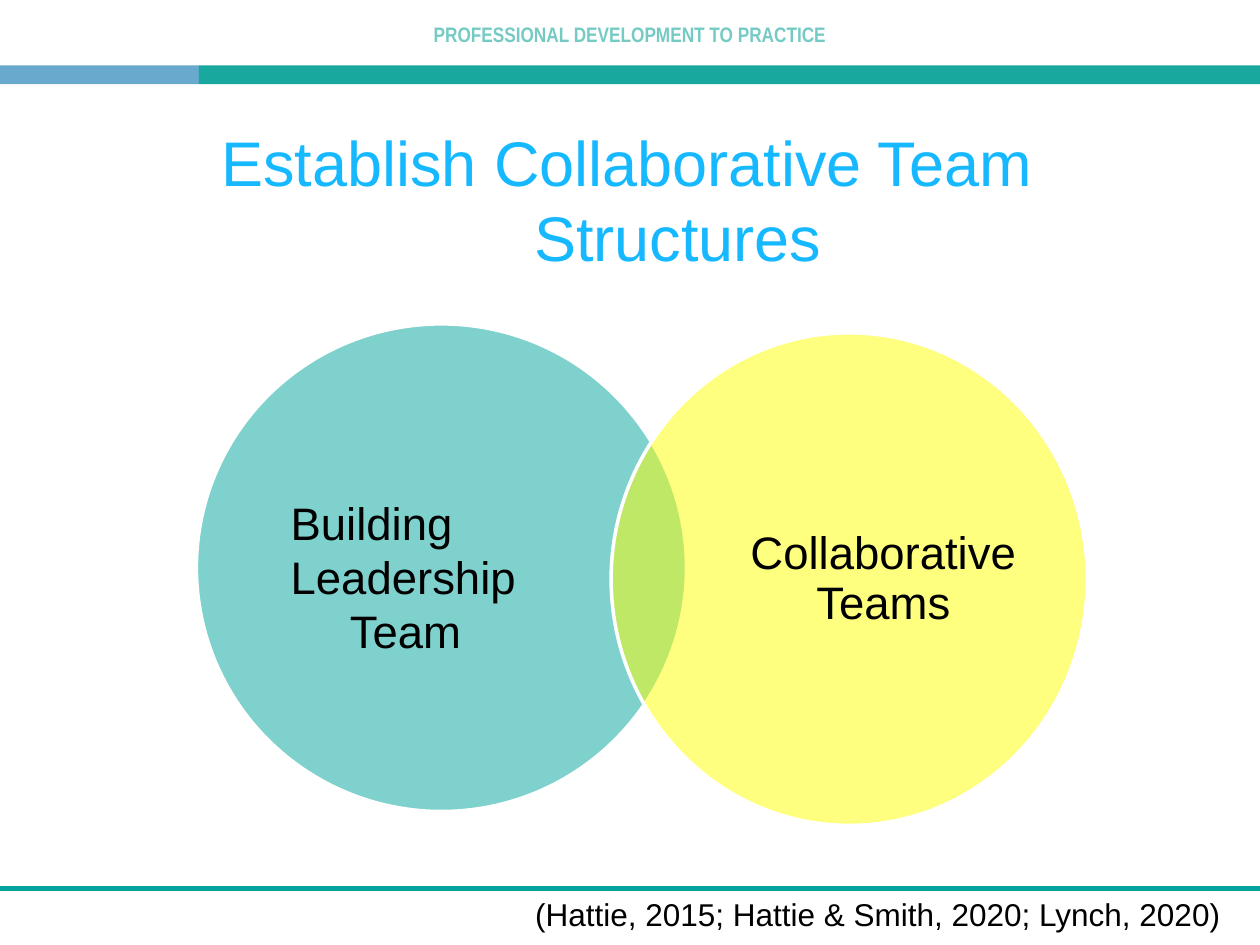
from dataclasses import dataclass

from pptx import Presentation
from pptx.dml.color import RGBColor
from pptx.enum.shapes import MSO_CONNECTOR, MSO_SHAPE
from pptx.enum.text import MSO_ANCHOR, PP_ALIGN
from pptx.oxml.xmlchemy import OxmlElement
from pptx.slide import Slide
from pptx.util import Cm, Pt


@dataclass(frozen=True)
class Theme:
    teal: str = "19A89E"
    deep: str = "00A49D"
    blue: str = "69A9CD"
    sky: str = "16B8FF"
    yellow: str = "FFFF00"
    white: str = "FFFFFF"
    black: str = "000000"
    font: str = "Arial"
    narrow: str = "Arial Narrow"
    small: int = 12
    cite: int = 18
    label: int = 26
    title: int = 36


THEME = Theme()


@dataclass(frozen=True)
class Box:
    left: float
    top: float
    width: float
    height: float

    def place(self) -> tuple:
        return Cm(self.left), Cm(self.top), Cm(self.width), Cm(self.height)


@dataclass(frozen=True)
class Para:
    text: str
    size: int
    color: str = THEME.black
    font: str = THEME.font
    bold: bool = False
    align: PP_ALIGN = PP_ALIGN.CENTER
    pitch: float = 0  # line pitch in points, 0 for single spacing
    margin: float = 0
    indent: float = 0
    alpha: int = 100


@dataclass(frozen=True)
class Circle:
    box: Box
    fill: str
    area: Box
    drop: float  # top inset of the label
    paras: tuple[Para, ...]


def fade(fill, alpha: int) -> None:
    """Make a solid fill see-through, alpha in percent."""
    node = OxmlElement("a:alpha")
    node.set("val", str(alpha * 1000))
    fill._xPr.solidFill[0].append(node)


def add_text(slide: Slide, box: Box, paras: tuple[Para, ...],
             pad: tuple = (0.25, 0.13, 0.25, 0.13),
             anchor: MSO_ANCHOR = MSO_ANCHOR.TOP) -> None:
    frame = slide.shapes.add_textbox(*box.place()).text_frame
    frame.word_wrap = True
    frame.vertical_anchor = anchor
    (frame.margin_left, frame.margin_top,
     frame.margin_right, frame.margin_bottom) = map(Cm, pad)
    for i, para in enumerate(paras):
        p = frame.add_paragraph() if i else frame.paragraphs[0]
        p.alignment = para.align
        if para.pitch:
            p.line_spacing = Pt(para.pitch)
        props = p._p.get_or_add_pPr()
        props.set("marL", str(Cm(para.margin)))
        props.set("indent", str(Cm(para.indent)))
        run = p.add_run()
        run.text = para.text
        font = run.font
        font.name, font.size, font.bold = para.font, Pt(para.size), para.bold
        font.color.rgb = RGBColor.from_string(para.color)
        if para.alpha < 100:
            fade(font.fill, para.alpha)


def add_shape(slide: Slide, kind: MSO_SHAPE, box: Box, fill: str,
              alpha: int = 100, edge: str = "") -> None:
    shape = slide.shapes.add_shape(kind, *box.place())
    shape.shadow.inherit = False
    shape.fill.solid()
    shape.fill.fore_color.rgb = RGBColor.from_string(fill)
    if alpha < 100:
        fade(shape.fill, alpha)
    if edge:
        shape.line.color.rgb = RGBColor.from_string(edge)
        shape.line.width = Pt(2)
    else:
        shape.line.fill.background()


def add_rule(slide: Slide, top: float, width: float) -> None:
    line = slide.shapes.add_connector(
        MSO_CONNECTOR.STRAIGHT, Cm(0), Cm(top), Cm(width), Cm(top))
    line.line.color.rgb = RGBColor.from_string(THEME.deep)
    line.line.width = Pt(3)
    line._element.spPr.append(OxmlElement("a:effectLst"))


def add_circle(slide: Slide, item: Circle) -> None:
    add_shape(slide, MSO_SHAPE.OVAL, item.box, item.fill, 50, THEME.white)
    add_text(slide, item.area, item.paras, (0, item.drop, 0, 0),
             MSO_ANCHOR.MIDDLE)


WIDTH, HEIGHT = 25.4, 19.05
SPLIT = 4.01  # where the two header bars meet
BASE = 17.91  # footer rule

CIRCLES = (
    Circle(Box(3.96, 6.53, 9.88, 9.83), THEME.deep,
           Box(5.33, 7.67, 5.69, 7.52), 0.38,
           (Para("Building Leadership", THEME.label, align=PP_ALIGN.LEFT,
                 pitch=31, margin=0.53),
            Para("Team", THEME.label, pitch=31))),
    Circle(Box(12.32, 6.71, 9.6, 9.93), THEME.yellow,
           Box(15.04, 7.87, 5.54, 7.59), 0,
           (Para("Collaborative Teams", THEME.label, pitch=28.5),)),
)


def main() -> None:
    deck = Presentation()
    deck.slide_width, deck.slide_height = Cm(WIDTH), Cm(HEIGHT)
    slide = deck.slides.add_slide(deck.slide_layouts[6])

    # Header band
    add_text(slide, Box(0, 0.33, WIDTH, 1.02),
             (Para("PROFESSIONAL DEVELOPMENT TO PRACTICE", THEME.small,
                   THEME.teal, THEME.narrow, bold=True, alpha=60),),
             (0.18, 0.1, 0.18, 0.1))
    for left, right, fill in ((0, SPLIT, THEME.blue),
                              (SPLIT, WIDTH, THEME.teal)):
        add_shape(slide, MSO_SHAPE.RECTANGLE,
                  Box(left, 1.32, right - left, 0.38), fill)

    # Title
    add_text(slide, Box(0, 2.36, 24, 2.57),
             (Para("Establish Collaborative Team Structures", THEME.title,
                   THEME.sky, pitch=43, margin=3.33, indent=-2.06),))

    # Two circles that overlap
    for item in CIRCLES:
        add_circle(slide, item)

    # Footer
    add_rule(slide, BASE, WIDTH)
    add_text(slide, Box(10.54, BASE, WIDTH - 10.54, 1.02),
             (Para("(Hattie, 2015; Hattie & Smith, 2020; Lynch, 2020)",
                   THEME.cite, align=PP_ALIGN.LEFT),))

    deck.save("out.pptx")


if __name__ == "__main__":
    main()
